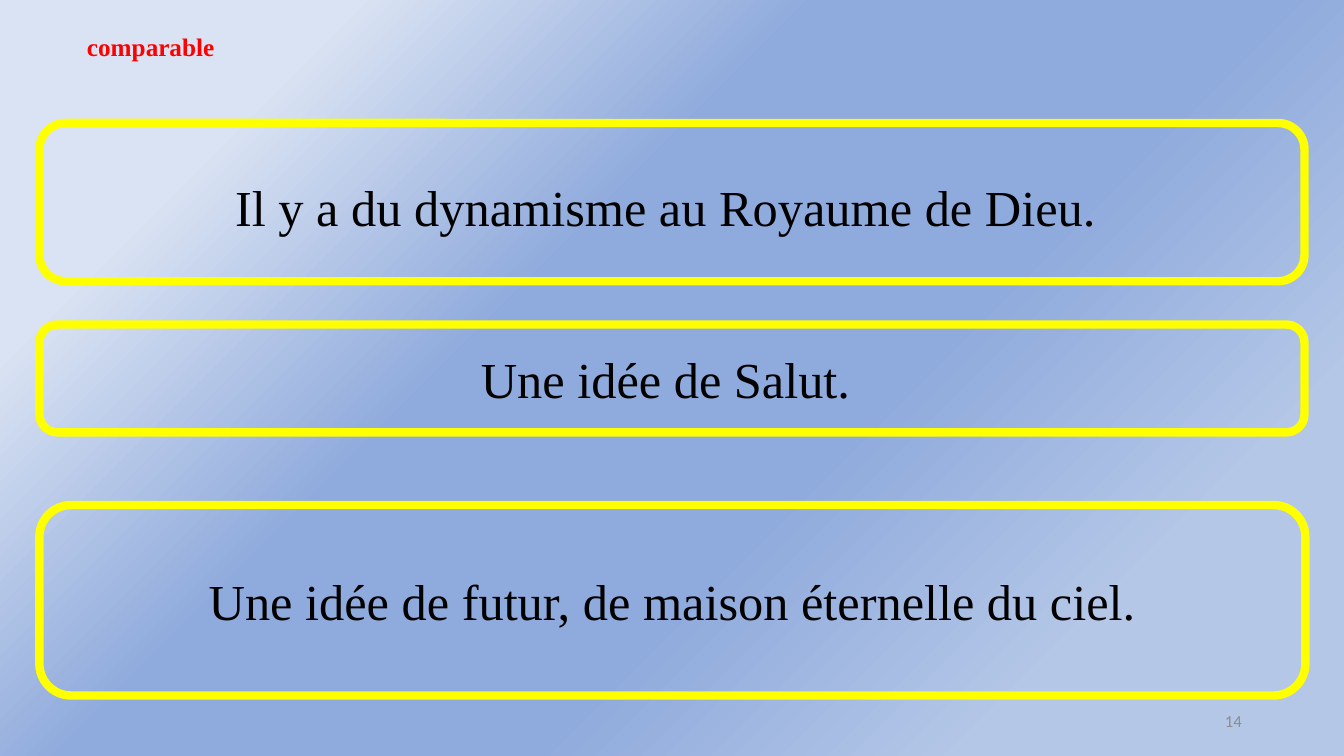
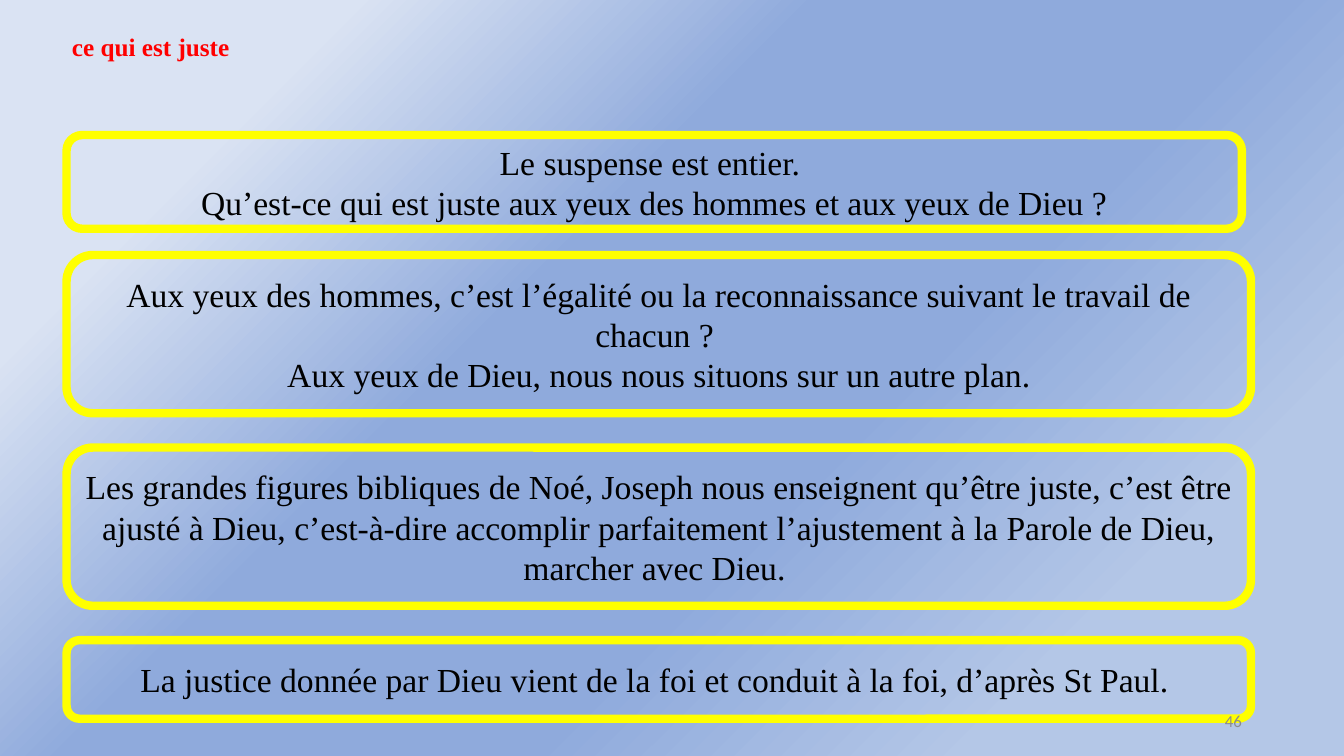
import copy

import pptx
import pptx.dml.color
import pptx.enum.shapes
import pptx.enum.text
import pptx.oxml.ns
import pptx.util

COLOURS = {
    "pale": "DAE3F3",
    "mid": "8FAADC",
    "soft": "B4C7E7",
    "frame": "FFFF00",
    "title": "FF0000",
    "body": "000000",
    "number": "8C8C8C",
}
SERIF = "Times New Roman"
ALIGN = pptx.enum.text.PP_ALIGN
ANCHOR = pptx.enum.text.MSO_ANCHOR

deck = pptx.Presentation()
deck.slide_width = pptx.util.Inches(13.33)
deck.slide_height = pptx.util.Inches(7.5)
column = deck.slide_width / 100
row = deck.slide_height / 100


def rgb(name):
    return pptx.dml.color.RGBColor.from_string(COLOURS[name])


def grid(left, top, width, height):
    """Turn percentages of the slide's size into lengths."""
    return [int(n * unit) for n, unit in
            zip((left, top, width, height), (column, row, column, row))]


def write(frame, lines, size, colour, align=ALIGN.CENTER, font=SERIF,
          bold=False, anchor=ANCHOR.MIDDLE):
    frame.word_wrap = True
    frame.vertical_anchor = anchor
    for index, line in enumerate(lines):
        paragraph = frame.paragraphs[0] if index == 0 else frame.add_paragraph()
        paragraph.alignment = align
        run = paragraph.add_run()
        run.text = line
        run.font.name = font
        run.font.size = pptx.util.Pt(size)
        run.font.bold = bold
        run.font.color.rgb = rgb(colour)


# Background shared by all slides: a diagonal gradient on the master
master = deck.slide_master
backdrop = master.background.fill
backdrop.gradient()
backdrop.gradient_angle = 135
stop_list = master.element.find(".//" + pptx.oxml.ns.qn("a:gsLst"))
for stop in list(stop_list):
    stop_list.append(copy.deepcopy(stop))
gradient = [(0.18, "soft"), (0.39, "mid"), (0.61, "mid"), (0.83, "pale")]
for stop, (position, colour) in zip(backdrop.gradient_stops, gradient):
    stop.position = position
    stop.color.rgb = rgb(colour)

# Each statement: top, width, height, lines, line spacing, space after
pages = [
    {
        "title": "comparable", "number": "14", "left": 2.93, "size": 36,
        "statements": [
            (16.27, 94.13, 20.93,
             ["Il y a du dynamisme au Royaume de Dieu. "], 1.15, 10),
            (42.93, 94.13, 14.27, ["Une idée de Salut. "], 1, 0),
            (66.8, 94.2, 25.2,
             ["Une idée de futur, de maison éternelle du ciel."], 1, 0),
        ],
    },
    {
        "title": "ce qui est juste", "number": "46", "left": 4.95, "size": 24,
        "statements": [
            (17.87, 87.45, 12.4,
             ["Le suspense est entier. ",
              "Qu’est-ce qui est juste aux yeux des hommes et aux yeux de Dieu ?"],
             1, 0),
            (33.73, 88.13, 20.93,
             ["Aux yeux des hommes, c’est l’égalité ou la reconnaissance "
              "suivant le travail de chacun ? ",
              "Aux yeux de Dieu, nous nous situons sur un autre plan."], 1, 0),
            (59.2, 88.13, 20.93,
             ["Les grandes figures bibliques de Noé, Joseph nous enseignent "
              "qu’être juste, c’est être ajusté à Dieu, c’est-à-dire accomplir "
              "parfaitement l’ajustement à la Parole de Dieu, marcher avec Dieu. "],
             1, 0),
            (84.67, 88.13, 10.4,
             ["La justice donnée par Dieu vient de la foi et conduit à la foi, "
              "d’après St Paul. "], 1, 0),
        ],
    },
]

for page in pages:
    slide = deck.slides.add_slide(deck.slide_layouts[6])

    title = slide.shapes.add_textbox(*grid(-5.85, 3.55, 34.13, 5.33))
    write(title.text_frame, [page["title"]], 18, "title",
          bold=True, anchor=ANCHOR.TOP)

    for top, width, height, lines, spacing, after in page["statements"]:
        statement = slide.shapes.add_shape(
            pptx.enum.shapes.MSO_SHAPE.ROUNDED_RECTANGLE,
            *grid(page["left"], top, width, height))
        statement.shadow.inherit = False
        statement.fill.background()
        statement.line.color.rgb = rgb("frame")
        statement.line.width = pptx.util.Pt(6)
        write(statement.text_frame, lines, page["size"], "body")
        for paragraph in statement.text_frame.paragraphs:
            paragraph.line_spacing = float(spacing)
            paragraph.space_after = pptx.util.Pt(after)

    number = slide.shapes.add_textbox(*grid(70.65, 92.67, 22.5, 5.33))
    write(number.text_frame, [page["number"]], 12, "number",
          align=ALIGN.RIGHT, font="Calibri")

deck.save("out.pptx")
